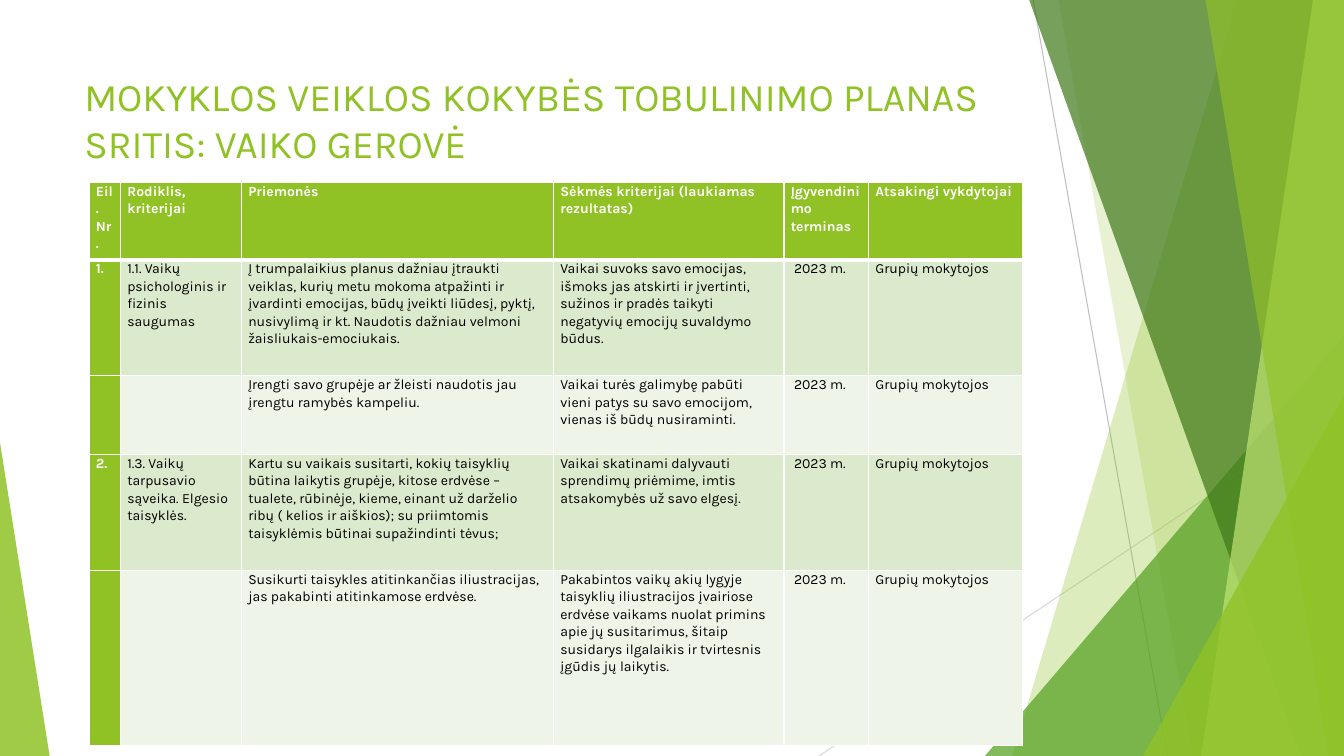
from dataclasses import dataclass

from lxml.etree import SubElement
from pptx import Presentation
from pptx.dml.color import RGBColor
from pptx.enum.shapes import MSO_CONNECTOR as Connector, MSO_SHAPE as Preset
from pptx.enum.text import MSO_ANCHOR as Anchor, MSO_AUTO_SIZE as AutoSize, PP_ALIGN as Align
from pptx.oxml.ns import qn
from pptx.util import Pt

FONT = "Karla"
WIDTH, HEIGHT = 960, 540
BLEED_TOP = -0.6
COLORS = {
    "white": "FFFFFF", "black": "000000", "lime": "90C226", "green": "54A021",
    "forest": "3F7819", "pale_lime": "C0E474", "gray": "BFBFBF",
    "light_gray": "D9D9D9", "odd_row": "DBE9CD", "even_row": "EEF4E8",
}


@dataclass(frozen=True)
class Ray:
    """A thin line between two points."""
    start: tuple[float, float]
    end: tuple[float, float]
    color: str


@dataclass(frozen=True)
class Band:
    """A slanted band that runs from its left edge to the slide's right edge."""
    top_left: float
    bottom_left: float
    color: str
    opacity: int


@dataclass(frozen=True)
class Wedge:
    """A right triangle standing on the slide's bottom edge."""
    left: float
    top: float
    width: float
    apex: float
    color: str
    opacity: int


RAYS = [
    Ray((738, 0), (834, HEIGHT), "gray"),
    Ray((WIDTH, 290), (585, HEIGHT), "light_gray"),
]
FACETS = [
    Band(884, 723, "lime", 30),
    Band(756, 852, "lime", 20),
    Wedge(703.5, 240, 256.5, 1, "green", 72),
    Band(735, 929.5, "forest", 70),
    Band(938, 858, "pale_lime", 70),
    Band(861, 949, "lime", 65),
    Wedge(816.5, 283, 143.5, 1, "lime", 80),
    Wedge(0, 316, 35.5, 0, "lime", 85),
]

TITLE = "MOKYKLOS VEIKLOS KOKYBĖS TOBULINIMO PLANAS\vSRITIS: VAIKO GEROVĖ"
COLUMN_WIDTHS = [22.5, 86.4, 222.9, 164.6, 60.5, 109.8]
ROW_HEIGHTS = [55.4, 82.8, 56.2, 82.8, 125.3]
TERM_COLUMN = 4
TERM = "2023 m."
TEACHERS = "Grupių mokytojos"
HEADINGS = [
    "Eil. Nr.", "Rodiklis, kriterijai", "Priemonės",
    "Sėkmės kriterijai (laukiamas rezultatas)", "Įgyvendinimo terminas",
    "Atsakingi vykdytojai",
]
MEASURES = [
    ["1.", "1.1. Vaikų psichologinis ir fizinis saugumas",
     "Į trumpalaikius planus dažniau įtraukti veiklas, kurių metu mokoma atpažinti ir "
     "įvardinti emocijas, būdų įveikti liūdesį, pyktį, nusivylimą ir kt. Naudotis dažniau "
     "velmoni žaisliukais-emociukais.",
     "Vaikai suvoks savo emocijas, išmoks jas atskirti ir įvertinti, sužinos ir pradės "
     "taikyti negatyvių emocijų suvaldymo būdus."],
    ["", "",
     "Įrengti savo grupėje ar žleisti naudotis jau įrengtu ramybės kampeliu.",
     "Vaikai turės galimybę pabūti vieni patys su savo emocijom, vienas iš būdų nusiraminti."],
    ["2.", "1.3. Vaikų tarpusavio sąveika. Elgesio taisyklės.",
     "Kartu su vaikais susitarti, kokių taisyklių būtina laikytis grupėje, kitose erdvėse – "
     "tualete, rūbinėje, kieme, einant už darželio ribų ( kelios ir aiškios); su priimtomis "
     "taisyklėmis būtinai supažindinti tėvus;",
     "Vaikai skatinami dalyvauti sprendimų priėmime, imtis atsakomybės už savo elgesį."],
    ["", "",
     "Susikurti taisykles atitinkančias iliustracijas, jas pakabinti atitinkamose erdvėse.",
     "Pakabintos vaikų akių lygyje taisyklių iliustracijos įvairiose erdvėse vaikams nuolat "
     "primins apie jų susitarimus, šitaip susidarys ilgalaikis ir tvirtesnis įgūdis jų laikytis."],
]


def rgb(name: str) -> RGBColor:
    """Look up a named colour."""
    return RGBColor.from_string(COLORS[name])


def write_text(frame, text: str, *, size: float, color: str, bold: bool = False,
               spacing: float = 1.0) -> None:
    """Put one formatted, left-aligned paragraph into a text frame."""
    paragraph = frame.paragraphs[0]
    paragraph.text = text
    paragraph.alignment = Align.LEFT
    paragraph.line_spacing = spacing
    for run in paragraph.runs:
        run.font.name = FONT
        run.font.size = Pt(size)
        run.font.bold = bold
        run.font.color.rgb = rgb(color)


def draw_ray(slide, ray: Ray) -> None:
    """Draw a hairline without a shadow."""
    connector = slide.shapes.add_connector(
        Connector.STRAIGHT, *(Pt(value) for value in ray.start + ray.end))
    connector.line.color.rgb = rgb(ray.color)
    connector.line.width = Pt(0.75)
    SubElement(connector.element.spPr, qn("a:effectLst"))


def draw_facet(slide, facet: Band | Wedge) -> None:
    """Draw a translucent band or wedge."""
    if isinstance(facet, Band):
        builder = slide.shapes.build_freeform(Pt(facet.top_left), Pt(BLEED_TOP))
        corners = [(WIDTH, BLEED_TOP), (WIDTH, HEIGHT), (facet.bottom_left, HEIGHT)]
        builder.add_line_segments([(Pt(x), Pt(y)) for x, y in corners], close=True)
        shape = builder.convert_to_shape()
    else:
        shape = slide.shapes.add_shape(
            Preset.ISOSCELES_TRIANGLE, Pt(facet.left), Pt(facet.top),
            Pt(facet.width), Pt(HEIGHT - facet.top))
        shape.adjustments[0] = facet.apex
    shape.shadow.inherit = False
    shape.line.fill.background()
    shape.fill.solid()
    shape.fill.fore_color.rgb = rgb(facet.color)
    color = shape.element.spPr.find(qn("a:solidFill")).find(qn("a:srgbClr"))
    SubElement(color, qn("a:alpha"), val=str(facet.opacity * 1000))


def place_title(slide) -> None:
    """Position and fill the title placeholder."""
    title = slide.shapes.title
    title.left, title.top, title.width, title.height = Pt(53), Pt(48), Pt(677), Pt(104)
    frame = title.text_frame
    frame.auto_size = AutoSize.NONE
    frame.word_wrap = True
    frame.vertical_anchor = Anchor.TOP
    write_text(frame, TITLE, size=27.9, color="lime")


def border_cell(cell, widths: dict[str, float]) -> None:
    """Give each named side of a cell a white border."""
    properties = cell._tc.get_or_add_tcPr()
    for side, width in widths.items():
        line = SubElement(properties, qn(f"a:ln{side}"), w=str(Pt(width)))
        fill = SubElement(line, qn("a:solidFill"))
        SubElement(fill, qn("a:srgbClr"), val=COLORS["white"])


def draw_plan(slide) -> None:
    """Draw the improvement plan table."""
    rows = [HEADINGS] + [measure + [TERM, TEACHERS] for measure in MEASURES]
    table = slide.shapes.add_table(
        len(rows), len(HEADINGS), Pt(63.7), Pt(130.3),
        Pt(sum(COLUMN_WIDTHS)), Pt(sum(ROW_HEIGHTS))).table
    for column, width in zip(table.columns, COLUMN_WIDTHS):
        column.width = Pt(width)
    for row_index, (row, height) in enumerate(zip(rows, ROW_HEIGHTS)):
        table.rows[row_index].height = Pt(height)
        body_fill = "odd_row" if row_index % 2 else "even_row"
        sides = {"L": 1, "R": 1, "B": 1} if row_index else {"L": 1, "R": 1, "T": 1, "B": 3}
        for column_index, text in enumerate(row):
            cell = table.cell(row_index, column_index)
            accented = row_index == 0 or column_index == 0
            indented = row_index > 0 and column_index == TERM_COLUMN
            cell.margin_left = Pt(7.2 if indented else 4.8)
            cell.margin_right = Pt(5.4 if column_index else 4.8)
            cell.margin_top = cell.margin_bottom = Pt(0)
            border_cell(cell, sides)
            cell.fill.solid()
            cell.fill.fore_color.rgb = rgb("lime" if accented else body_fill)
            if text:
                write_text(cell.text_frame, text, size=10, bold=accented, spacing=1.07,
                           color="white" if accented else "black")


def main() -> None:
    """Build and save the presentation."""
    presentation = Presentation()
    presentation.slide_width, presentation.slide_height = Pt(WIDTH), Pt(HEIGHT)
    slide = presentation.slides.add_slide(presentation.slide_layouts.get_by_name("Title Only"))
    for ray in RAYS:
        draw_ray(slide, ray)
    for facet in FACETS:
        draw_facet(slide, facet)
    place_title(slide)
    draw_plan(slide)
    presentation.save("out.pptx")


if __name__ == "__main__":
    main()
